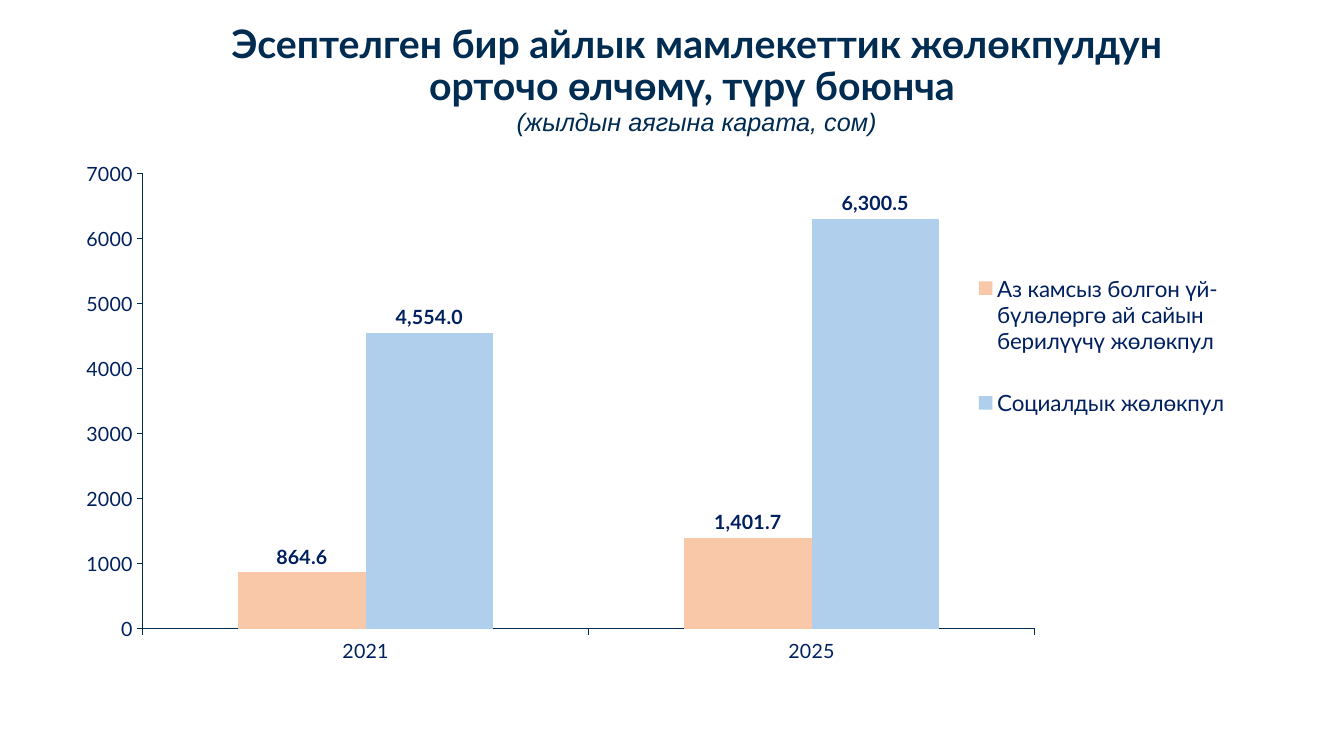
import pptx
import pptx.util
import pptx.chart.data
import pptx.dml.color
import pptx.enum.chart
import pptx.enum.text
import pptx.oxml
import pptx.oxml.ns

Inches = pptx.util.Inches
Pt = pptx.util.Pt
RGBColor = pptx.dml.color.RGBColor
enums = pptx.enum.chart

NAVY = RGBColor(0x00, 0x2C, 0x52)
BLUE = RGBColor(0x00, 0x20, 0x60)
PEACH = RGBColor(0xF8, 0xC8, 0xA8)
SKY = RGBColor(0xAF, 0xCF, 0xEC)


def style(font, color, **values):
    font.color.rgb = color
    for key, value in values.items():
        setattr(font, key, value)


def place(part, index, box, inner=False):
    """Give a chart part a fixed place, as fractions of the chart."""
    for old in part.findall(pptx.oxml.ns.qn("c:layout")):
        part.remove(old)
    tags = '<c:layoutTarget val="inner"/>' if inner else ""
    tags += "".join(f'<c:{k}Mode val="edge"/>' for k in "xy")
    tags += "".join(f'<c:{k} val="{v}"/>' for k, v in zip("xywh", box))
    part.insert(index, pptx.oxml.parse_xml(
        f'<c:layout {pptx.oxml.ns.nsdecls("c")}><c:manualLayout>{tags}'
        "</c:manualLayout></c:layout>"))


deck = pptx.Presentation()
deck.slide_width, deck.slide_height = Inches(13.33), Inches(7.5)
slide = deck.slides.add_slide(deck.slide_layouts[6])

# Title
box = slide.shapes.add_textbox(Inches(1.59), Inches(0.25), Inches(10.64), Inches(1.1))
frame = box.text_frame
frame.word_wrap = True
frame.vertical_anchor = pptx.enum.text.MSO_ANCHOR.MIDDLE
para = frame.paragraphs[0]
para.alignment = pptx.enum.text.PP_ALIGN.CENTER
para.line_spacing = 0.9
head = para.add_run()
head.text = "Эсептелген бир айлык мамлекеттик жөлөкпулдун орточо өлчөмү, түрү боюнча "
style(head.font, NAVY, name="Lato", size=Pt(28), bold=True)
para.add_line_break()
note = para.add_run()
note.text = "(жылдын аягына карата, сом)"
style(note.font, NAVY, name="Arial", size=Pt(18), bold=False, italic=True)

# Chart data
data = pptx.chart.data.CategoryChartData(number_format="#,##0.0")
data.categories = ["2021", "2025"]
data.add_series("Аз камсыз болгон үй-бүлөлөргө ай сайын берилүүчү жөлөкпул", [864.6, 1401.7])
data.add_series("Социалдык жөлөкпул", [4554, 6300.5])
chart = slide.shapes.add_chart(
    enums.XL_CHART_TYPE.COLUMN_CLUSTERED,
    Inches(0.6), Inches(1.57), Inches(11.64), Inches(5.02), data).chart
chart.has_title = False
style(chart.font, BLUE, name="Lato", size=Pt(14))

# Columns and labels
plot = chart.plots[0]
plot.gap_width, plot.overlap, plot.vary_by_categories = 150, 0, False
for series, color in zip(plot.series, [PEACH, SKY]):
    series.invert_if_negative = False
    series.format.fill.solid()
    series.format.fill.fore_color.rgb = color
    labels = series.data_labels
    style(labels.font, BLUE, name="Lato", size=Pt(14), bold=True)
    form = {"show_value": True, "number_format": "#,##0.0",
            "number_format_is_linked": False,
            "position": enums.XL_LABEL_POSITION.OUTSIDE_END}
    for key, value in form.items():
        setattr(labels, key, value)

# Axes
for axis in (chart.category_axis, chart.value_axis):
    axis.has_major_gridlines = False
    axis.major_tick_mark = enums.XL_TICK_MARK.OUTSIDE
    axis.minor_tick_mark = enums.XL_TICK_MARK.NONE
    axis.format.line.color.rgb = NAVY
    axis.format.line.width = Pt(0.75)
    style(axis.tick_labels.font, BLUE, name="Lato", size=Pt(14))
scale = chart.value_axis
scale.minimum_scale, scale.maximum_scale, scale.major_unit = 0, 7000, 1000
scale.tick_labels.number_format = "0"
scale.tick_labels.number_format_is_linked = False

# Legend and layout
chart.has_legend = True
legend = chart.legend
legend.position = enums.XL_LEGEND_POSITION.BOTTOM
legend.include_in_layout = False
style(legend.font, BLUE, name="Lato", size=Pt(16))
place(legend._element, 1, (0.78, 0.16, 0.22, 0.42))
area = chart._chartSpace.chart.plotArea
place(area, 0, (0.07, 0.03, 0.76, 0.9), inner=True)

deck.save("out.pptx")
